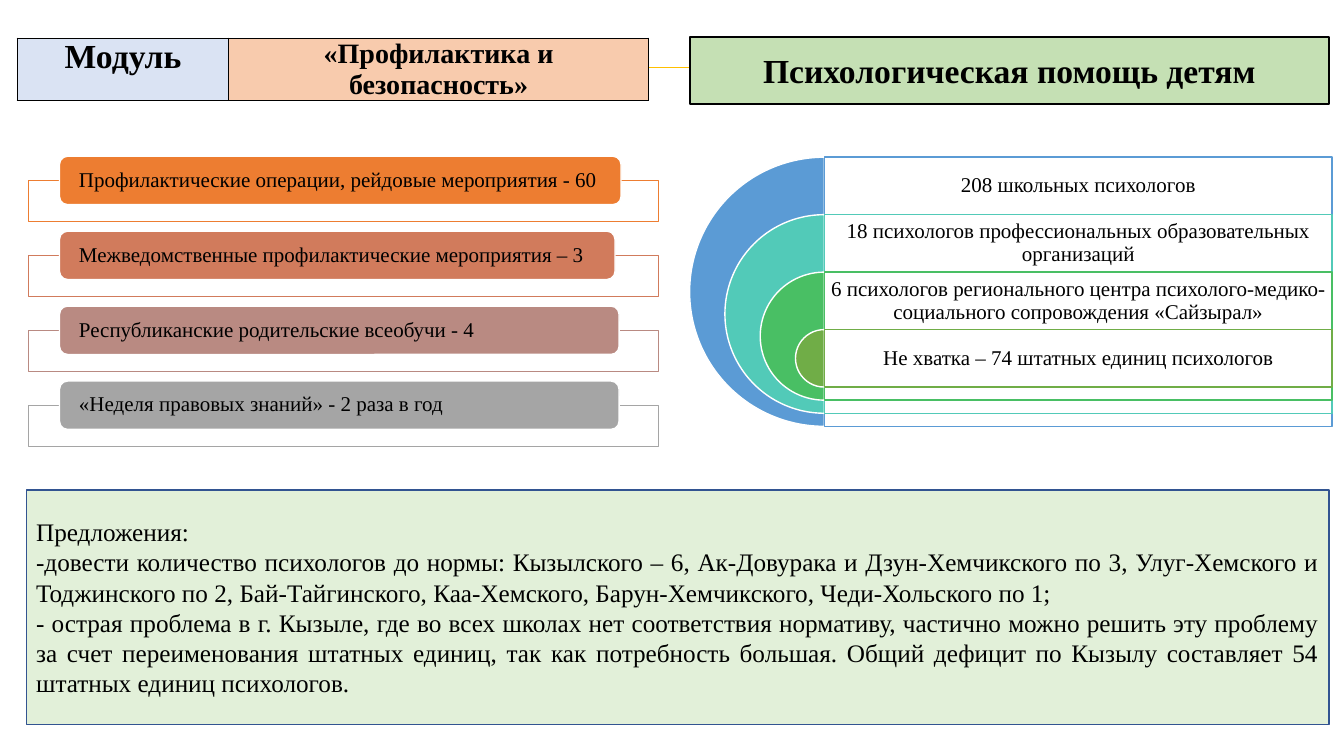
from dataclasses import dataclass

from lxml.etree import SubElement
from pptx import Presentation
from pptx.dml.color import RGBColor
from pptx.enum.shapes import MSO_CONNECTOR, MSO_SHAPE
from pptx.enum.text import MSO_ANCHOR, PP_ALIGN
from pptx.oxml import parse_xml
from pptx.oxml.ns import nsdecls, qn
from pptx.shapes.autoshape import Shape
from pptx.shapes.shapetree import GroupShapes, SlideShapes
from pptx.table import _Cell
from pptx.text.text import TextFrame
from pptx.util import Inches, Pt


@dataclass(frozen=True)
class Theme:
    """Colours, font and type sizes of the slide."""
    font: str = "Times New Roman"
    black: str = "000000"
    white: str = "FFFFFF"
    blue: str = "DAE3F3"
    peach: str = "F8CBAD"
    green: str = "C5E0B4"
    pale_green: str = "E2F0D9"
    navy: str = "325491"
    gold: str = "FFC000"
    title: int = 24
    subtitle: int = 20
    body: int = 18
    label: int = 15


@dataclass(frozen=True)
class Box:
    """Position and size in inches."""
    left: float
    top: float
    width: float
    height: float


@dataclass(frozen=True)
class Activity:
    """One prevention activity with its pill width."""
    text: str
    color: str
    width: float


@dataclass(frozen=True)
class Ring:
    """One half ring with its caption."""
    text: str
    color: str


THEME = Theme()
ACTIVITIES = (
    Activity("Профилактические операции, рейдовые мероприятия - 60", "ED7D31", 5.57),
    Activity("Межведомственные профилактические мероприятия – 3", "D17B5C", 5.51),
    Activity("Республиканские родительские всеобучи - 4", "B98A82", 5.55),
    Activity("«Неделя правовых знаний» - 2 раза в год", "A5A5A5", 5.55),
)
RINGS = (
    Ring("208 школьных психологов", "5B9BD5"),
    Ring("18 психологов профессиональных образовательных организаций", "52CAB8"),
    Ring("6 психологов регионального центра психолого-медико-социального "
         "сопровождения «Сайзырал»", "49BF64"),
    Ring("Не хватка – 74 штатных единиц психологов", "70AD47"),
)
PROPOSALS = (
    "Предложения:",
    "-довести количество психологов до нормы: Кызылского – 6, Ак-Довурака и "
    "Дзун-Хемчикского по 3, Улуг-Хемского и Тоджинского по 2, Бай-Тайгинского, "
    "Каа-Хемского, Барун-Хемчикского, Чеди-Хольского по 1;",
    "- острая проблема в г. Кызыле, где во всех школах нет соответствия нормативу, "
    "частично можно решить эту проблему за счет переименования штатных единиц, так как "
    "потребность большая. Общий дефицит по Кызылу составляет 54 штатных единиц психологов.",
)


def write_text(frame: TextFrame, *lines: str, size: int, bold: bool = False,
               align: PP_ALIGN = PP_ALIGN.CENTER, spacing: float = 1.0) -> None:
    """Fill a text frame with equally formatted paragraphs."""
    for index, line in enumerate(lines):
        para = frame.add_paragraph() if index else frame.paragraphs[0]
        para.alignment = align
        para.line_spacing = spacing
        span = para.add_run()
        span.text = line
        span.font.name = THEME.font
        span.font.size = Pt(size)
        span.font.bold = bold
        span.font.color.rgb = RGBColor.from_string(THEME.black)


def set_frame(frame: TextFrame, side: float, edge: float) -> None:
    """Wrap and centre a text frame vertically with the given insets."""
    frame.word_wrap = True
    frame.vertical_anchor = MSO_ANCHOR.MIDDLE
    frame.margin_left = frame.margin_right = Inches(side)
    frame.margin_top = frame.margin_bottom = Inches(edge)


def add_figure(shapes: SlideShapes | GroupShapes, kind: MSO_SHAPE, box: Box, fill: str,
               line: str, weight: float = 1, opacity: int = 100) -> Shape:
    """Add a flat preset shape."""
    shape = shapes.add_shape(kind, Inches(box.left), Inches(box.top),
                             Inches(box.width), Inches(box.height))
    shape.shadow.inherit = False
    shape.fill.solid()
    shape.fill.fore_color.rgb = RGBColor.from_string(fill)
    shape.line.color.rgb = RGBColor.from_string(line)
    shape.line.width = Pt(weight)
    if opacity < 100:
        color = shape.fill._xPr.find(qn("a:solidFill")).find(qn("a:srgbClr"))
        SubElement(color, qn("a:alpha")).set("val", str(opacity * 1000))
    return shape


def add_link(shapes: SlideShapes) -> None:
    """Draw the gold line that runs behind both headings."""
    link = shapes.add_connector(MSO_CONNECTOR.STRAIGHT, Inches(1.67), Inches(0.67),
                                Inches(9.27), Inches(0.67))
    link.line.color.rgb = RGBColor.from_string(THEME.gold)
    link.line.width = Pt(1)
    SubElement(link._element.spPr, qn("a:effectLst"))


def style_cell(cell: _Cell, text: str, size: int, fill: str) -> None:
    """Write, border and fill one heading cell."""
    cell.margin_left = cell.margin_right = Inches(0.06)
    cell.margin_top = cell.margin_bottom = 0
    write_text(cell.text_frame, text, size=size, bold=True)
    properties = cell._tc.get_or_add_tcPr()
    for side in ("lnL", "lnR", "lnT", "lnB"):
        properties.append(parse_xml(
            f'<a:{side} {nsdecls("a")} w="12700"><a:solidFill>'
            f'<a:srgbClr val="{THEME.black}"/></a:solidFill></a:{side}>'))
    cell.fill.solid()
    cell.fill.fore_color.rgb = RGBColor.from_string(fill)


def add_module_table(shapes: SlideShapes) -> None:
    """Add the two-cell module heading."""
    table = shapes.add_table(1, 2, Inches(0.17), Inches(0.38),
                             Inches(6.26), Inches(0.62)).table
    table.first_row = table.horz_banding = False
    for column, width in zip(table.columns, (2.1, 4.16)):
        column.width = Inches(width)
    style_cell(table.cell(0, 0), "Модуль", THEME.title, THEME.blue)
    style_cell(table.cell(0, 1), "«Профилактика и безопасность»",
               THEME.subtitle, THEME.peach)


def add_activities(shapes: SlideShapes) -> None:
    """Add the list of pills, each over its outlined bar."""
    group = shapes.add_group_shape().shapes
    for index, activity in enumerate(ACTIVITIES):
        top = 1.55 + index * 2.23 / 3
        add_figure(group, MSO_SHAPE.RECTANGLE, Box(0.28, top + 0.24, 6.25, 0.41),
                   THEME.white, activity.color, opacity=90)
        pill = add_figure(group, MSO_SHAPE.ROUNDED_RECTANGLE,
                          Box(0.59, top, activity.width, 0.48),
                          activity.color, THEME.white)
        set_frame(pill.text_frame, 0.17, 0)
        write_text(pill.text_frame, activity.text, size=THEME.label,
                   align=PP_ALIGN.LEFT, spacing=0.9)


def add_rings(shapes: SlideShapes) -> None:
    """Add the nested half rings with their captioned bands."""
    group = shapes.add_group_shape().shapes
    band = 0.57
    for index, ring in enumerate(RINGS):
        top, size = 1.56 + index * band, 2.67 - index * 0.7
        pie = add_figure(group, MSO_SHAPE.PIE, Box(6.84 + index * 0.35, top, size, size),
                         ring.color, THEME.white)
        pie.adjustments[0], pie.adjustments[1] = 54, 162
        add_figure(group, MSO_SHAPE.RECTANGLE, Box(8.18, top, 5.03, size),
                   THEME.white, ring.color, opacity=90)
        caption = group.add_textbox(Inches(8.18), Inches(top), Inches(5.03), Inches(band))
        set_frame(caption.text_frame, 0.06, 0.06)
        write_text(caption.text_frame, ring.text, size=THEME.label, spacing=0.9)


def main() -> None:
    """Build and save the slide."""
    deck = Presentation()
    deck.slide_width, deck.slide_height = Inches(13.33), Inches(7.5)
    page = deck.slides.add_slide(deck.slide_layouts[6])
    add_link(page.shapes)
    add_module_table(page.shapes)
    add_activities(page.shapes)
    heading = add_figure(page.shapes, MSO_SHAPE.RECTANGLE, Box(6.84, 0.37, 6.34, 0.66),
                         THEME.green, THEME.black, weight=1.5)
    set_frame(heading.text_frame, 0.1, 0.05)
    write_text(heading.text_frame, "Психологическая помощь детям",
               size=THEME.title, bold=True)
    add_rings(page.shapes)
    proposals = add_figure(page.shapes, MSO_SHAPE.RECTANGLE, Box(0.26, 4.86, 12.92, 2.33),
                           THEME.pale_green, THEME.navy)
    set_frame(proposals.text_frame, 0.1, 0.05)
    write_text(proposals.text_frame, *PROPOSALS, size=THEME.body, align=PP_ALIGN.JUSTIFY)
    deck.save("out.pptx")


if __name__ == "__main__":
    main()
